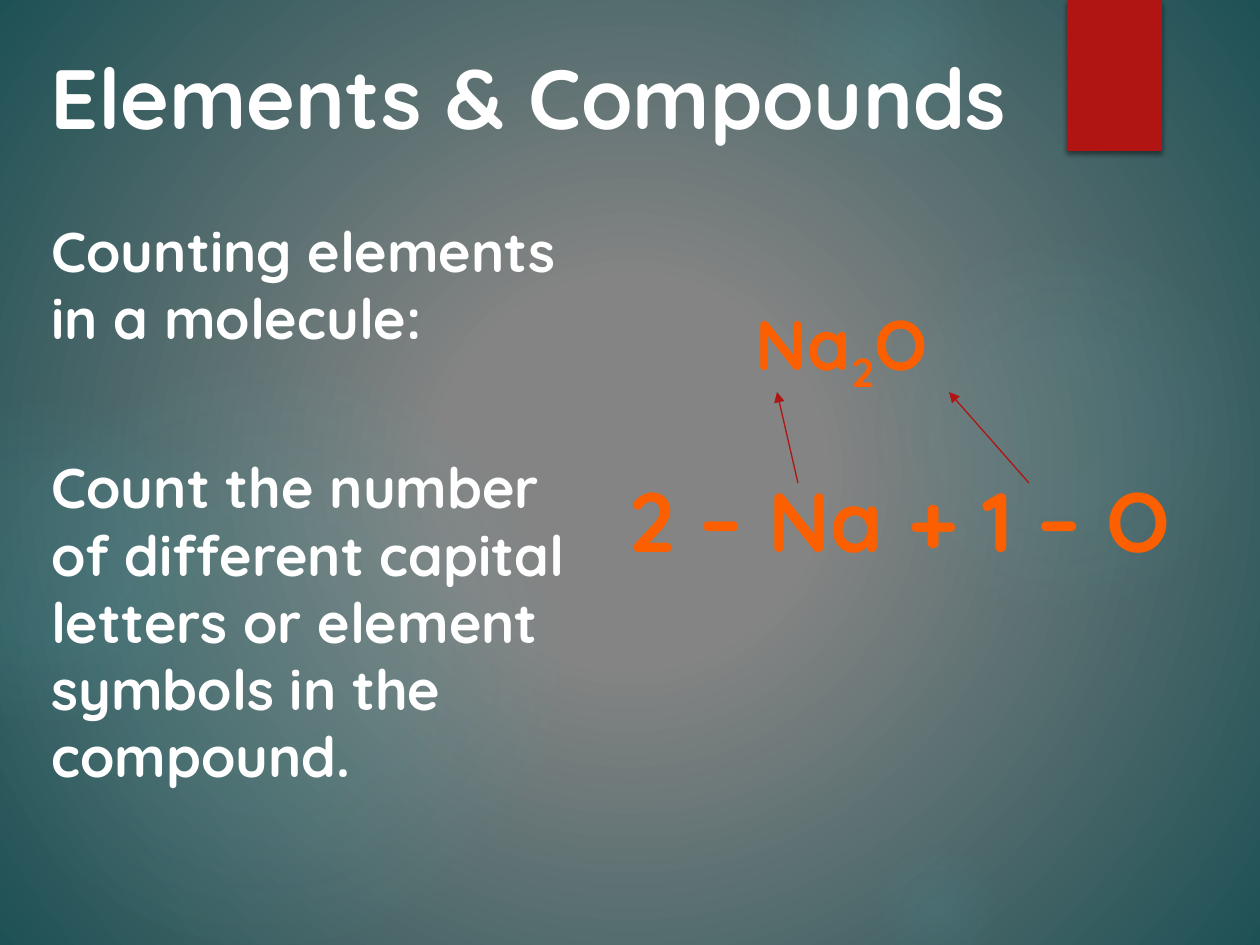
from lxml import etree
from pptx import Presentation
from pptx import util as u
from pptx.dml.color import RGBColor
from pptx.enum import shapes, text
from pptx.oxml.ns import qn

SCALE = 914400 / 126
FONT = "Quicksand"
WHITE, RED, TEAL = "FFFFFF", "B01513", "50B9C1"
ORANGE, BROWN = "FC5F00", "B24300"


def px(length):
    return u.Emu(round(length * SCALE))


def color(value):
    return RGBColor.from_string(value)


def add_xml(parent, tag, **attributes):
    return etree.SubElement(parent, qn(tag), {k: str(v) for k, v in attributes.items()})


def add_color_xml(parent, value, alpha):
    element = add_xml(parent, "a:srgbClr", val=value)
    if alpha < 100:
        add_xml(element, "a:alpha", val=alpha * 1000)


def make_radial(container, stops):
    """Turn the first gradient in container into a centred circle of (position, colour, alpha)."""
    gradient = next(container.iter(qn("a:gradFill")))
    for child in list(gradient):
        gradient.remove(child)
    stop_list = add_xml(gradient, "a:gsLst")
    for position, value, alpha in stops:
        add_color_xml(add_xml(stop_list, "a:gs", pos=position * 1000), value, alpha)
    circle = add_xml(gradient, "a:path", path="circle")
    add_xml(circle, "a:fillToRect", l=50000, t=50000, r=50000, b=50000)


class SlideBuilder:
    def __init__(self, presentation):
        self.slide = presentation.slides.add_slide(presentation.slide_layouts[5])
        self.shapes = self.slide.shapes

    def background(self, stops):
        self.slide.background.fill.gradient()
        make_radial(self.slide.element, stops)

    def plain_shape(self, kind, left, top, width, height):
        shape = self.shapes.add_shape(kind, px(left), px(top), px(width), px(height))
        shape.shadow.inherit = False
        shape.line.fill.background()
        return shape

    def glow(self, left, top, size, inner, middle, edge):
        """Draw a soft circle; inner and middle are opacities, edge is where it fades out."""
        shape = self.plain_shape(shapes.MSO_SHAPE.OVAL, left, top, size, size)
        shape.fill.gradient()
        make_radial(shape.element, [(0, TEAL, inner), (36, TEAL, middle), (edge, TEAL, 0)])

    def ribbon(self, left, top, width, height):
        shape = self.plain_shape(shapes.MSO_SHAPE.RECTANGLE, left, top, width, height)
        shape.fill.solid()
        shape.fill.fore_color.rgb = color(RED)
        effects = next(shape.element.iter(qn("a:effectLst")))
        shadow = add_xml(effects, "a:outerShdw", blurRad=u.Pt(3), dist=u.Pt(2),
                         dir=5400000, rotWithShape=0)
        add_color_xml(shadow, "000000", 45)

    def format_run(self, run, size):
        run.font.name = FONT
        run.font.size = u.Pt(size)
        run.font.bold = True
        run.font.color.rgb = color(WHITE)

    def title(self, wording, left, top, width, height, size):
        title = self.shapes.title
        title.left, title.top, title.width, title.height = map(px, (left, top, width, height))
        frame = title.text_frame
        frame.text = wording
        frame.word_wrap = True
        frame.auto_size = text.MSO_AUTO_SIZE.NONE
        frame.vertical_anchor = text.MSO_ANCHOR.TOP
        frame.paragraphs[0].alignment = text.PP_ALIGN.LEFT
        self.format_run(frame.paragraphs[0].runs[0], size)
        # Bring the title in front of the decoration
        title.element.getparent().append(title.element)

    def text_box(self, left, top, width, height, wrap=True):
        box = self.shapes.add_textbox(px(left), px(top), px(width), px(height))
        box.text_frame.word_wrap = wrap
        return box.text_frame

    def body(self, wordings, left, top, width, height, size, gap):
        frame = self.text_box(left, top, width, height)
        frame.text = "\n".join(wordings)
        for index, paragraph in enumerate(frame.paragraphs):
            paragraph.space_before = u.Pt(gap if index else 0)
            self.format_run(paragraph.runs[0], size)

    def formula(self, parts, left, top, width, height, size, wrap):
        """Write centred orange text; parts are (wording, baseline shift in percent)."""
        frame = self.text_box(left, top, width, height, wrap)
        paragraph = frame.paragraphs[0]
        paragraph.alignment = text.PP_ALIGN.CENTER
        for wording, shift in parts:
            run = paragraph.add_run()
            run.text = wording
            self.format_run(run, size)
            fill = run.font.fill
            fill.gradient()
            fill.gradient_angle = 270
            for stop, position, value in zip(fill.gradient_stops, (0.25, 1), (ORANGE, BROWN)):
                stop.position = position
                stop.color.rgb = color(value)
            properties = run.font._element
            properties.set("spc", "50")
            if shift:
                properties.set("baseline", str(shift * 1000))

    def arrow(self, start, end):
        points = map(px, (*start, *end))
        connector = self.shapes.add_connector(shapes.MSO_CONNECTOR.STRAIGHT, *points)
        connector.line.color.rgb = color(RED)
        connector.line.width = u.Pt(0.75)
        add_xml(connector.line._get_or_add_ln(), "a:tailEnd", type="triangle")
        add_xml(connector.element.spPr, "a:effectLst")


def main():
    presentation = Presentation()
    presentation.slide_width, presentation.slide_height = px(1260), px(945)
    builder = SlideBuilder(presentation)

    builder.background([(24, "848484", 100), (100, "1E5155", 100)])
    for glow in (
        (868, 231, 388, 7, 6, 69),
        (784, -63, 220, 14, 7, 73),
        (868, 840, 136, 9, 5, 66),
        (-21, 368, 577, 11, 10, 75),
        (-116, 399, 325, 8, 8, 72),
    ):
        builder.glow(*glow)
    builder.ribbon(1067, 0, 95, 151)

    builder.title("Elements & Compounds", 38, 39, 1138, 116, size=48)
    builder.body(
        ["Counting elements in a molecule:",
         "Count the number of different capital letters or element symbols in the compound."],
        39, 210, 561, 672, size=32, gap=58.4)

    builder.formula([("Na", 0), ("2", -25), ("O", 0)], 735, 294, 213, 97, size=40, wrap=False)
    builder.formula([("2 – Na + 1 – O ", 0)], 607, 462, 611, 199, size=48, wrap=True)
    builder.arrow((798, 483), (777, 392))
    builder.arrow((1029, 483), (949, 392))

    presentation.save("out.pptx")


if __name__ == "__main__":
    main()
